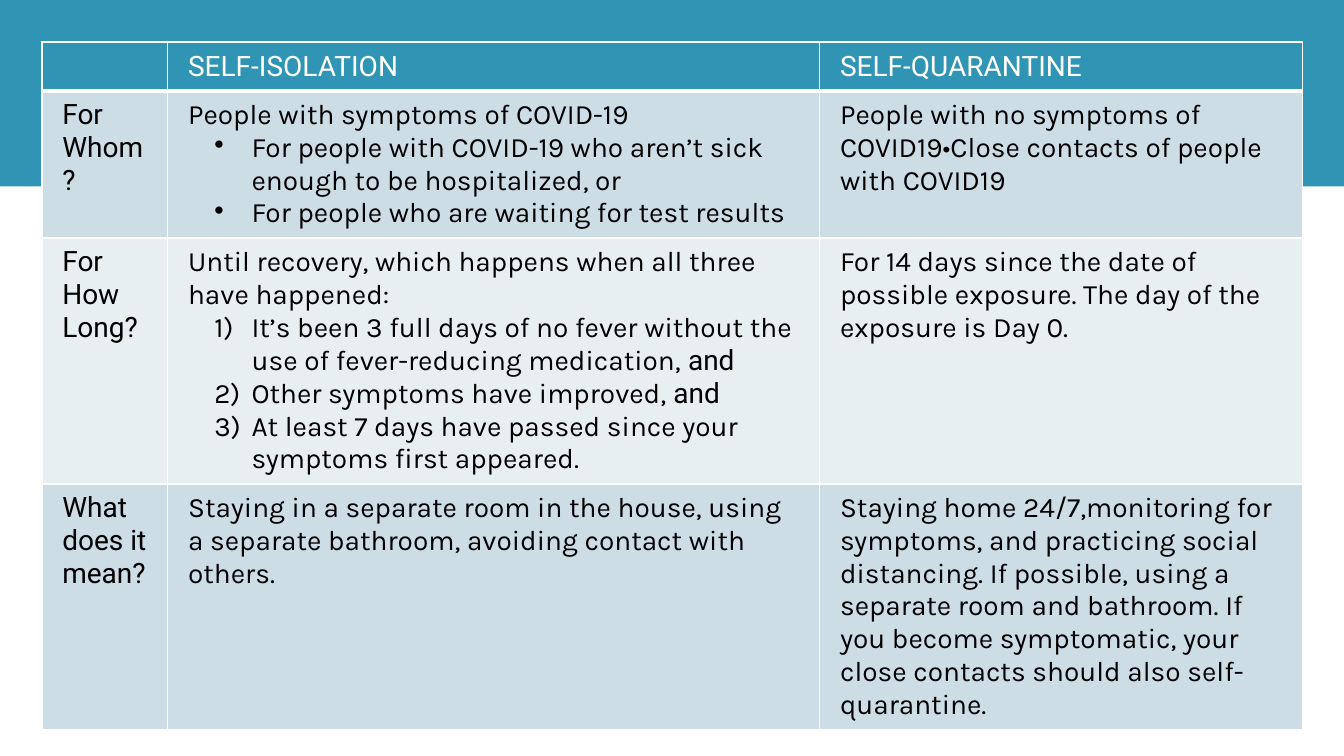
import pptx
import pptx.dml.color
import pptx.enum.shapes
import pptx.oxml
import pptx.oxml.ns
import pptx.util
from pptx.dml.color import RGBColor
from pptx.util import Cm

TEAL = RGBColor(0x30, 0x95, 0xB4)
BLUE_GREY = RGBColor(0xCD, 0xDD, 0xE5)
PALE_GREY = RGBColor(0xE8, 0xEF, 0xF2)
WHITE = RGBColor(0xFF, 0xFF, 0xFF)
BLACK = RGBColor(0x00, 0x00, 0x00)

HEADING_FONT = "Roboto"
BODY_FONT = "Karla"
BULLET = '<a:buChar {} char="•"/>'
NUMBER = '<a:buAutoNum {} type="arabicParenR"/>'

COLUMN_WIDTHS = (3.17, 16.43, 12.16)
ROW_HEIGHTS = (1.07, 3.56, 6.02, 5.94)
ROW_FILLS = (TEAL, BLUE_GREY, PALE_GREY, BLUE_GREY)

HEADINGS = ("", "SELF-ISOLATION", "SELF-QUARANTINE")
ROWS = (
    (
        "For Whom?",
        (
            ("People with symptoms of COVID-19", None),
            ("For people with COVID-19 who aren’t sick enough to be hospitalized, or", BULLET),
            ("For people who are waiting for test results", BULLET),
        ),
        (("People with no symptoms of COVID19•Close contacts of people with COVID19", None),),
    ),
    (
        "For How Long?",
        (
            ("Until recovery, which happens when all three have happened:", None),
            ("It’s been 3 full days of no fever without the use of fever-reducing medication, |and", NUMBER),
            ("Other symptoms have improved, |and", NUMBER),
            ("At least 7 days have passed since your symptoms first appeared.", NUMBER),
        ),
        (("For 14 days since the date of possible exposure. The day of the exposure is Day 0.", None),),
    ),
    (
        "What does it mean?",
        (("Staying in a separate room in the house, using a separate bathroom, "
          "avoiding contact with others.", None),),
        (("Staying home 24/7,monitoring for symptoms, and practicing social distancing. "
          "If possible, using a separate room and bathroom. If you become symptomatic, "
          "your close contacts should also self-quarantine.", None),),
    ),
)


def add_text(paragraph, text, font=BODY_FONT, size=20, color=BLACK):
    run = paragraph.add_run()
    run.text = text
    run.font.name = font
    run.font.size = pptx.util.Pt(size)
    run.font.color.rgb = color


def add_list_marker(paragraph, marker):
    properties = paragraph._p.get_or_add_pPr()
    properties.set("marL", str(Cm(1.6)))
    properties.set("indent", str(-Cm(0.94)))
    properties.append(pptx.oxml.parse_xml(marker.format(pptx.oxml.ns.nsdecls("a"))))


def fill_body_cell(cell, paragraphs):
    for index, (text, marker) in enumerate(paragraphs):
        frame = cell.text_frame
        paragraph = frame.add_paragraph() if index else frame.paragraphs[0]
        if marker:
            add_list_marker(paragraph, marker)
        body, _, emphasis = text.partition("|")
        add_text(paragraph, body)
        if emphasis:
            add_text(paragraph, emphasis, font=HEADING_FONT)


def set_borders(cell, top=1, bottom=1):
    properties = cell._tc.get_or_add_tcPr()
    widths = {"lnL": 1, "lnR": 1, "lnT": top, "lnB": bottom}
    for position, (side, width) in enumerate(widths.items()):
        border = pptx.oxml.parse_xml(
            f'<a:{side} {pptx.oxml.ns.nsdecls("a")} w="{pptx.util.Pt(width)}">'
            f'<a:solidFill><a:srgbClr val="{WHITE}"/></a:solidFill></a:{side}>'
        )
        properties.insert(position, border)


def format_cell(cell, row):
    cell.fill.solid()
    cell.fill.fore_color.rgb = ROW_FILLS[row]
    cell.margin_left = cell.margin_right = Cm(0.51)
    cell.margin_top = cell.margin_bottom = Cm(0.2)
    set_borders(cell, top=3 if row == 1 else 1, bottom=3 if row == 0 else 1)


def add_band(slide, width):
    band = slide.shapes.add_shape(
        pptx.enum.shapes.MSO_SHAPE.RECTANGLE, 0, 0, width, Cm(4.7))
    band.shadow.inherit = False
    band.fill.solid()
    band.fill.fore_color.rgb = TEAL
    band.line.fill.background()


def add_comparison_table(slide):
    table = slide.shapes.add_table(
        len(ROW_HEIGHTS), len(COLUMN_WIDTHS), Cm(1.06), Cm(1.06),
        Cm(sum(COLUMN_WIDTHS)), Cm(sum(ROW_HEIGHTS))).table
    table.horz_banding = False
    for column, width in zip(table.columns, COLUMN_WIDTHS):
        column.width = Cm(width)
    for index, height in enumerate(ROW_HEIGHTS):
        table.rows[index].height = Cm(height)
        for cell in table.rows[index].cells:
            format_cell(cell, index)

    for column, heading in enumerate(HEADINGS):
        if heading:
            paragraph = table.cell(0, column).text_frame.paragraphs[0]
            add_text(paragraph, heading, font=HEADING_FONT, color=WHITE)
            paragraph.runs[0].font.bold = False
    for row, (question, *answers) in enumerate(ROWS, start=1):
        label = table.cell(row, 0).text_frame.paragraphs[0]
        add_text(label, question, font=HEADING_FONT)
        for column, paragraphs in enumerate(answers, start=1):
            fill_body_cell(table.cell(row, column), paragraphs)
    table.first_row = True


def main():
    presentation = pptx.Presentation()
    presentation.slide_width = Cm(33.87)
    presentation.slide_height = Cm(19.05)
    slide = presentation.slides.add_slide(presentation.slide_layouts[6])
    add_band(slide, presentation.slide_width)
    add_comparison_table(slide)
    presentation.save("out.pptx")


if __name__ == "__main__":
    main()
